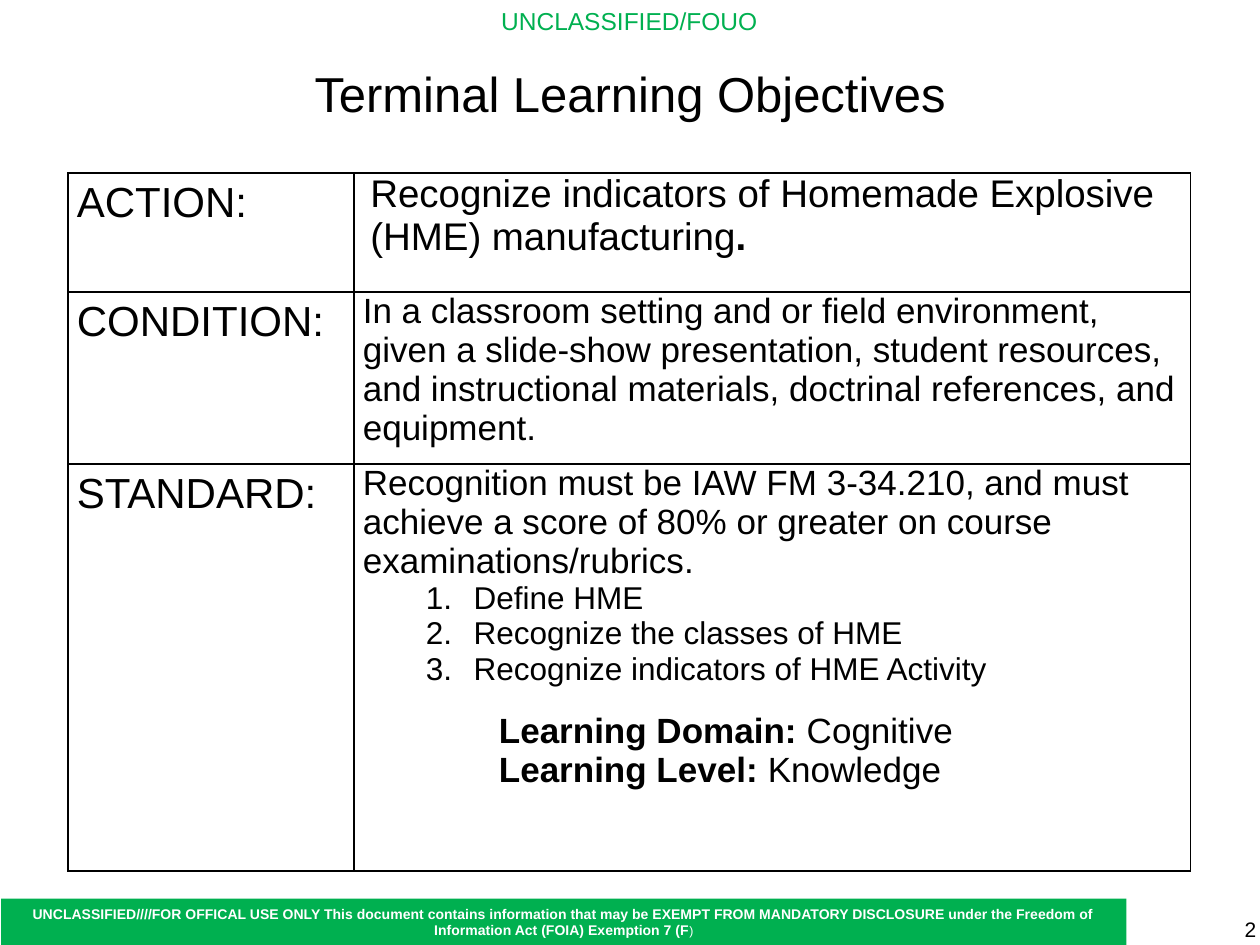
from dataclasses import dataclass

import pptx
import pptx.dml.color
import pptx.enum.shapes
import pptx.enum.text
import pptx.oxml
import pptx.oxml.ns
import pptx.util

BLACK = pptx.dml.color.RGBColor(0x00, 0x00, 0x00)
WHITE = pptx.dml.color.RGBColor(0xFF, 0xFF, 0xFF)
GREEN = pptx.dml.color.RGBColor(0x00, 0xB0, 0x50)
ALIGN = pptx.enum.text.PP_ALIGN
MIDDLE = pptx.enum.text.MSO_ANCHOR.MIDDLE
TOP = pptx.enum.text.MSO_ANCHOR.TOP
FONT = "Arial"
SLIDE_WIDTH = pptx.util.Inches(10)
SLIDE_HEIGHT = pptx.util.Inches(7.5)


@dataclass
class Area:
    """A rectangle in percent of the slide's width and height."""
    left: float
    top: float
    width: float
    height: float

    def lengths(self) -> tuple[int, int, int, int]:
        return (across(self.left), down(self.top),
                across(self.width), down(self.height))


@dataclass
class Span:
    text: str
    bold: bool = False
    size: float | None = None


@dataclass
class Line:
    """A paragraph; indents are in inches, sizes and gaps in points."""
    spans: list[Span]
    size: float
    indent: float = 0
    hanging: float = 0
    before: float = 0
    spacing: float = 1.0
    numbered: bool = False


@dataclass
class Objective:
    label: str
    height: float  # percent of the slide's height
    lines: list[Line]


OBJECTIVES = [
    Objective("ACTION:", 12.6, [
        Line([Span("Recognize indicators of Homemade Explosive (HME) manufacturing"),
              Span(".", bold=True)], 22, indent=0.06)]),
    Objective("CONDITION:", 18.2, [
        Line([Span("In a classroom setting and or field environment, given a "
                   "slide-show presentation, student resources, and instructional "
                   "materials, doctrinal references, and equipment.")], 20)]),
    Objective("STANDARD:", 43.1, [
        Line([Span("Recognition must be IAW FM 3-34.210, and must achieve a score "
                   "of 80% or greater on course examinations/rubrics.")], 20),
        *[Line([Span(step)], 18, indent=0.88, hanging=0.38, numbered=True)
          for step in ("Define HME", "Recognize the classes of HME",
                       "Recognize indicators of HME Activity")],
        Line([Span("Learning Domain:", bold=True), Span(" Cognitive")],
             20, indent=1.08, before=14),
        Line([Span("Learning Level:", bold=True), Span(" Knowledge")],
             20, indent=1.08)]),
]


def across(percent: float) -> int:
    return round(SLIDE_WIDTH * percent / 100)


def down(percent: float) -> int:
    return round(SLIDE_HEIGHT * percent / 100)


def write_text(frame, lines: list[Line], *, color=BLACK, align=ALIGN.LEFT) -> None:
    for index, line in enumerate(lines):
        para = frame.paragraphs[0] if index == 0 else frame.add_paragraph()
        props = para._p.get_or_add_pPr()
        props.set("marL", str(pptx.util.Inches(line.indent)))
        props.set("indent", str(-pptx.util.Inches(line.hanging)))
        if line.numbered:
            number = pptx.oxml.parse_xml(
                f'<a:buAutoNum {pptx.oxml.ns.nsdecls("a")} type="arabicPeriod"/>')
            props.append(number)
        para.alignment = align
        para.line_spacing = line.spacing
        para.space_before = pptx.util.Pt(line.before)
        for part in line.spans:
            span = para.add_run()
            span.text = part.text
            span.font.name = FONT
            span.font.size = pptx.util.Pt(part.size or line.size)
            span.font.bold = part.bold
            span.font.color.rgb = color


def add_text(page, area: Area, line: Line, *, color=BLACK, align=ALIGN.CENTER,
             anchor=MIDDLE, fill=None, wrap=True, side=0.1) -> None:
    if fill is None:
        box = page.shapes.add_textbox(*area.lengths())
    else:
        box = page.shapes.add_shape(
            pptx.enum.shapes.MSO_SHAPE.RECTANGLE, *area.lengths())
        box.shadow.inherit = False
        box.fill.solid()
        box.fill.fore_color.rgb = fill
        box.line.fill.background()
    frame = box.text_frame
    frame.word_wrap = wrap
    frame.vertical_anchor = anchor
    frame.margin_left = frame.margin_right = pptx.util.Inches(side)
    write_text(frame, [line], color=color, align=align)


def style_cell(cell) -> None:
    cell.margin_left = cell.margin_right = pptx.util.Inches(0.07)
    cell.margin_top = cell.margin_bottom = 0
    cell.fill.solid()
    cell.fill.fore_color.rgb = WHITE
    props = cell._tc.get_or_add_tcPr()
    for index, edge in enumerate(("lnL", "lnR", "lnT", "lnB")):
        border = pptx.oxml.parse_xml(
            f'<a:{edge} {pptx.oxml.ns.nsdecls("a")} w="{pptx.util.Pt(1)}">'
            f'<a:solidFill><a:srgbClr val="{BLACK}"/></a:solidFill></a:{edge}>')
        props.insert(index, border)


def add_objectives(page, left: float, top: float, columns: list[float]) -> None:
    height = sum(row.height for row in OBJECTIVES)
    area = Area(left, top, sum(columns), height)
    table = page.shapes.add_table(
        len(OBJECTIVES), len(columns), *area.lengths()).table
    table.first_row = table.horz_banding = False
    for column, width in zip(table.columns, columns):
        column.width = across(width)
    for index, objective in enumerate(OBJECTIVES):
        table.rows[index].height = down(objective.height)
        label = Line([Span(objective.label)], 24, spacing=1.15)
        for column, lines in enumerate(([label], objective.lines)):
            cell = table.cell(index, column)
            style_cell(cell)
            write_text(cell.text_frame, lines)


def main() -> None:
    deck = pptx.Presentation()
    deck.slide_width, deck.slide_height = SLIDE_WIDTH, SLIDE_HEIGHT
    page = deck.slides.add_slide(deck.slide_layouts[6])

    # Classification marking and footer banner
    add_text(page, Area(38.5, 0, 22.9, 4.5), Line([Span("UNCLASSIFIED/FOUO")], 14),
             color=GREEN, anchor=TOP, wrap=False)
    notice = ("UNCLASSIFIED////FOR OFFICAL USE ONLY This document contains "
              "information that may be EXEMPT FROM MANDATORY DISCLOSURE under the "
              "Freedom of Information Act (FOIA) Exemption 7 (F")
    add_text(page, Area(0.1, 95.1, 89.3, 4.9),
             Line([Span(notice, bold=True), Span(")", size=7)], 8),
             color=WHITE, fill=GREEN)

    # Title and page number
    add_text(page, Area(0, 4, 100, 11.6),
             Line([Span("Terminal Learning Objectives")], 28))
    add_text(page, Area(76.7, 96.7, 23.3, 3.3), Line([Span("2")], 12),
             align=ALIGN.RIGHT, side=0.03)

    # Action, condition and standard
    add_objectives(page, 5.4, 18.3, [22.7, 66.4])

    deck.save("out.pptx")


if __name__ == "__main__":
    main()
